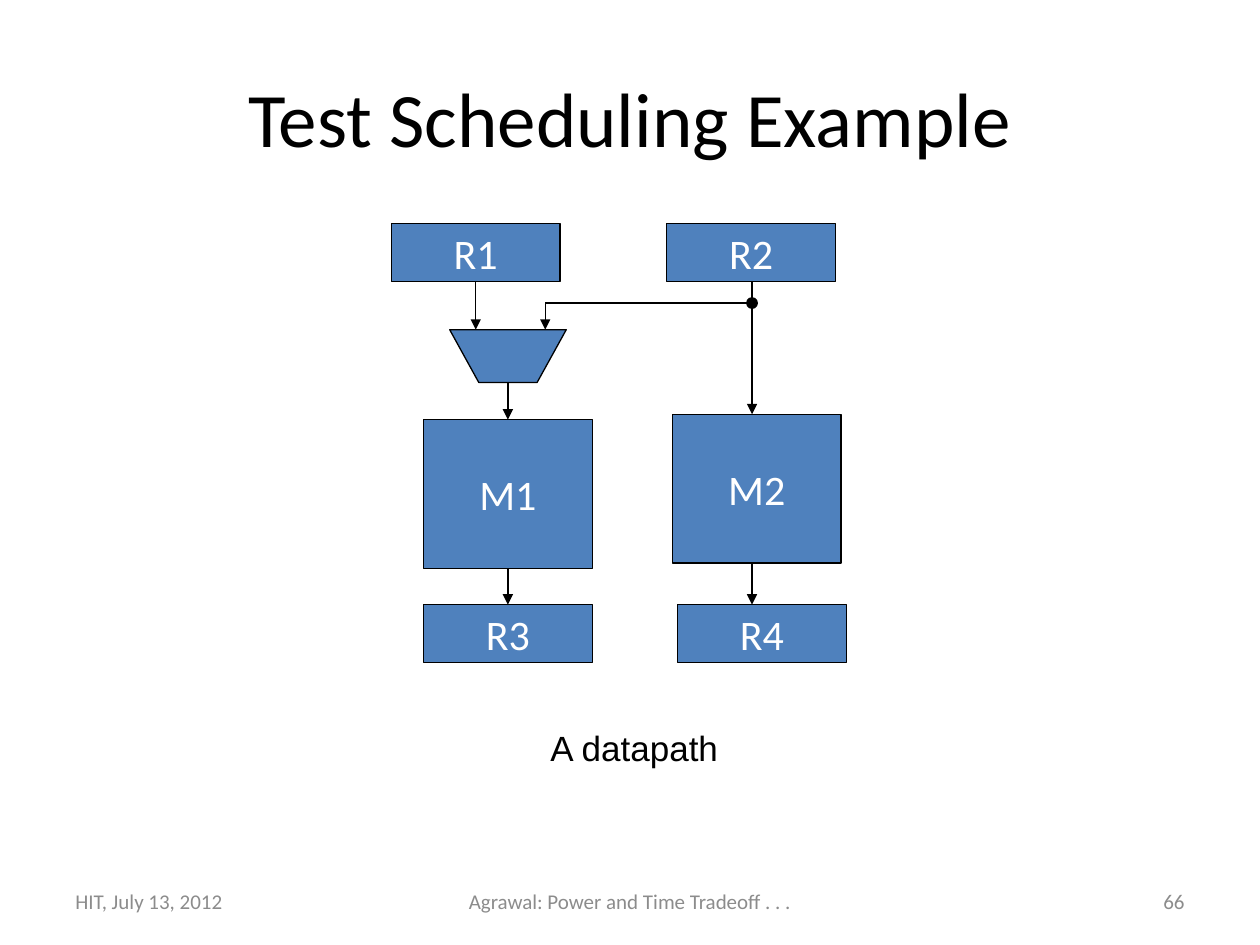
"""Build a slide showing a datapath as a test scheduling example."""
from lxml import etree
from pptx import Presentation
from pptx import util as u
from pptx.dml.color import RGBColor
from pptx.enum import shapes, text
from pptx.oxml.ns import qn

Pt = u.Pt
COLORS = {"block": "4F81BD", "ink": "000000", "label": "FFFFFF", "footer": "8C8C8C"}
LINE_W = 0.75
BOX_W, REG_H, MOD_H = 96.5, 33.1, 85

TITLE = "Test Scheduling Example"
CAPTION = "A datapath"
FOOTERS = [
    ("HIT, July 13, 2012", 36, 168, "LEFT"),
    ("Agrawal: Power and Time Tradeoff . . .", 246, 228, "CENTER"),
    ("66", 516, 168, "RIGHT"),
]
BLOCKS = {
    "R1": (223.6, 127.8, REG_H),
    "R2": (381, 127.8, REG_H),
    "M1": (242, 239.8, MOD_H),
    "M2": (384.2, 236.7, MOD_H),
    "R3": (242, 345.5, REG_H),
    "R4": (387.2, 345.5, REG_H),
}
MUX_X, MUX_TOP, MUX_W, MUX_H = 257, 188.4, 66.6, 30.2
BRANCH_Y, BRANCH_X, DOT = 173.2, 311.6, 6


def color(name):
    return RGBColor.from_string(COLORS[name])


def paint(sp, fill):
    sp.shadow.inherit = False
    sp.fill.solid()
    sp.fill.fore_color.rgb = color(fill)
    sp.line.color.rgb = color("ink")
    sp.line.width = Pt(LINE_W)


def write(sp, words, size, font, ink, align="CENTER", anchor="MIDDLE", wrap=True):
    tf = sp.text_frame
    tf.text = words
    tf.word_wrap = wrap
    tf.vertical_anchor = text.MSO_ANCHOR[anchor]
    p = tf.paragraphs[0]
    p.alignment = text.PP_ALIGN[align]
    r = p.runs[0]
    r.font.size, r.font.name, r.font.color.rgb = Pt(size), font, color(ink)


def add_wire(s, x1, y1, x2, y2, arrow=True):
    cn = s.shapes.add_connector(
        shapes.MSO_CONNECTOR.STRAIGHT, Pt(x1), Pt(y1), Pt(x2), Pt(y2))
    cn.line.color.rgb = color("ink")
    cn.line.width = Pt(LINE_W)
    if arrow:
        etree.SubElement(cn.line._get_or_add_ln(), qn("a:tailEnd"), type="triangle")
    etree.SubElement(cn._element.spPr, qn("a:effectLst"))


def add_mux(s):
    right, bottom, inset = MUX_X + MUX_W, MUX_TOP + MUX_H, MUX_W / 4
    corners = [(MUX_X + inset, bottom), (right - inset, bottom), (right, MUX_TOP)]
    fb = s.shapes.build_freeform(Pt(MUX_X), Pt(MUX_TOP), scale=1)
    fb.add_line_segments([(Pt(x), Pt(y)) for x, y in corners], close=True)
    paint(fb.convert_to_shape(), "block")


def add_wires(s):
    bottom = {name: y + h for name, (x, y, h) in BLOCKS.items()}
    top = {name: y for name, (x, y, h) in BLOCKS.items()}
    center = {name: x + BOX_W / 2 for name, (x, y, h) in BLOCKS.items()}
    left, right = center["M1"], center["R2"] + 0.5
    add_wire(s, center["R1"], bottom["R1"], center["R1"], MUX_TOP)
    add_wire(s, right, bottom["R2"], right, top["M2"])
    add_wire(s, left, MUX_TOP + MUX_H, left, top["M1"])
    add_wire(s, left, bottom["M1"], left, top["R3"])
    add_wire(s, right, bottom["M2"], right, top["R4"])
    add_wire(s, right, BRANCH_Y, BRANCH_X, BRANCH_Y, arrow=False)
    add_wire(s, BRANCH_X, BRANCH_Y, BRANCH_X, MUX_TOP)
    dot = s.shapes.add_shape(
        shapes.MSO_SHAPE.OVAL, Pt(right - DOT / 2), Pt(BRANCH_Y - DOT / 2), Pt(DOT), Pt(DOT))
    paint(dot, "ink")


def main():
    prs = Presentation()
    prs.slide_width, prs.slide_height = Pt(720), Pt(540)
    s = prs.slides.add_slide(prs.slide_layouts[5])

    for words, x, w, align in FOOTERS:
        sp = s.shapes.add_textbox(Pt(x), Pt(500.5), Pt(w), Pt(28.8))
        write(sp, words, 12, "Calibri", "footer", align)

    title = s.shapes.title
    title.left, title.top, title.width, title.height = Pt(36), Pt(21.6), Pt(648), Pt(90)
    write(title, TITLE, 44, "Calibri", "ink")

    for name, (x, y, h) in BLOCKS.items():
        sp = s.shapes.add_shape(
            shapes.MSO_SHAPE.RECTANGLE, Pt(x), Pt(y), Pt(BOX_W), Pt(h))
        paint(sp, "block")
        write(sp, name, 24, "Calibri", "label", wrap=False)

    add_mux(s)
    add_wires(s)

    sp = s.shapes.add_textbox(Pt(307.5), Pt(411.8), Pt(110.9), Pt(31))
    write(sp, CAPTION, 20, "Arial", "ink", "LEFT", "TOP", wrap=False)
    sp.text_frame.auto_size = text.MSO_AUTO_SIZE.SHAPE_TO_FIT_TEXT

    prs.save("out.pptx")


if __name__ == "__main__":
    main()
